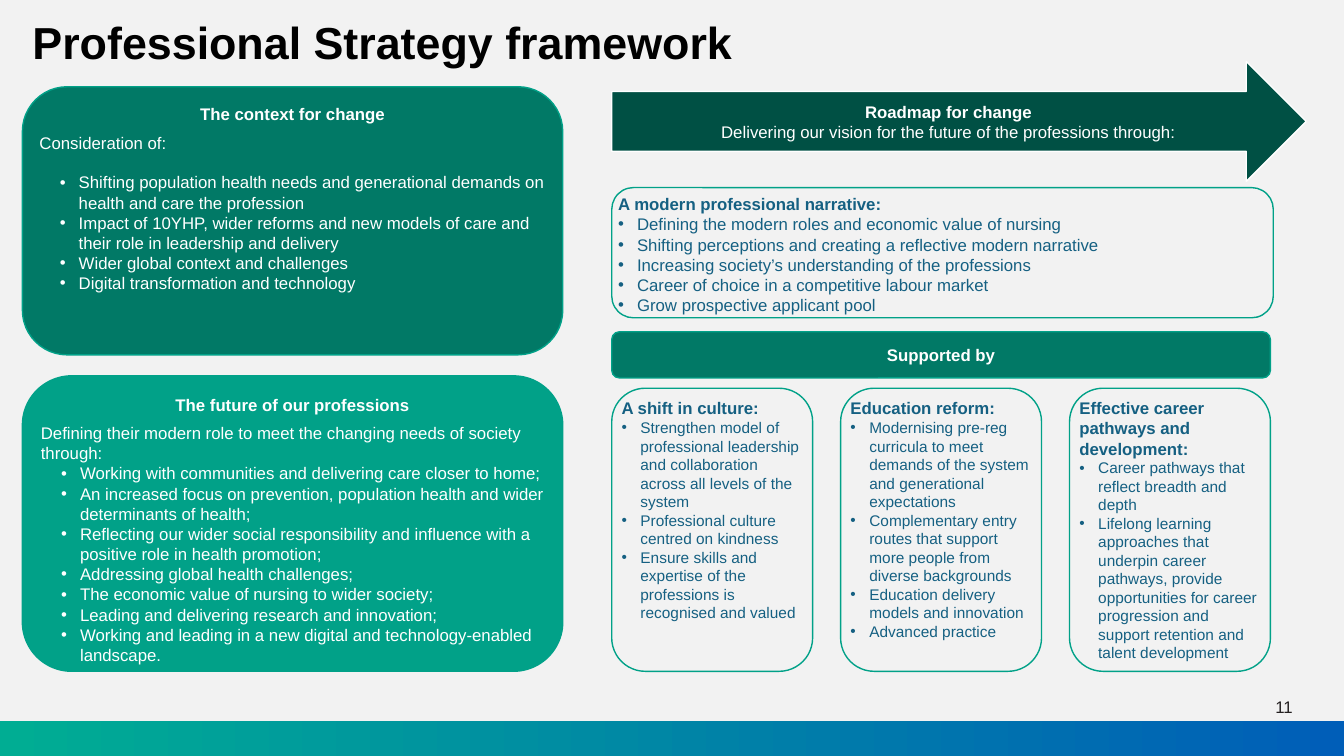
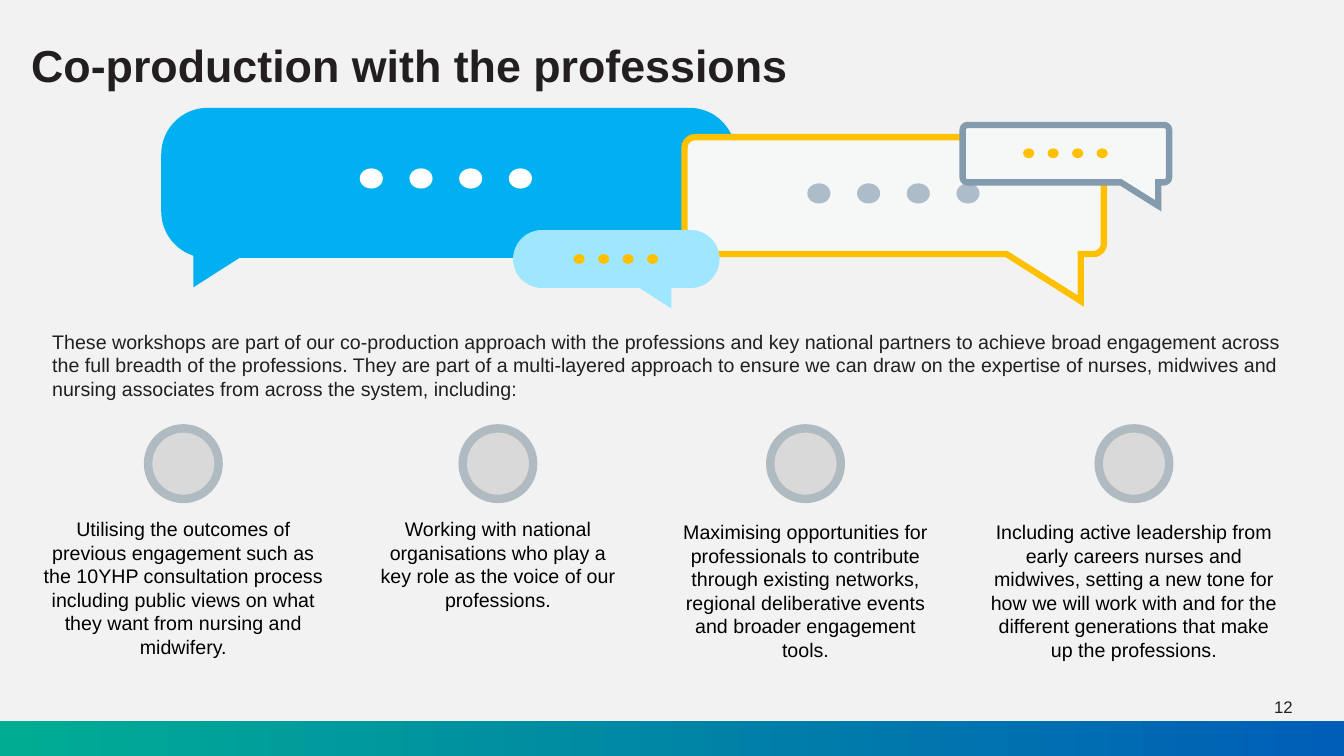
from math import cos, radians, sin

from lxml import etree
from pptx import Presentation
from pptx.dml.color import RGBColor
from pptx.enum.shapes import MSO_SHAPE as SHAPE
from pptx.enum.text import MSO_ANCHOR as ANCHOR, PP_ALIGN as ALIGN
from pptx.oxml.ns import qn
from pptx.util import Pt

C = {
    "page": "F2F2F2", "ink": "231F20", "black": "000000", "white": "FFFFFF",
    "blue": "005EB8", "mint": "00AD93", "green": "01A188", "teal": "017966",
    "forest": "005044", "navy": "156082", "sky": "00B0F0", "pale": "9FE6FF",
    "gold": "FFC000", "paper": "F6F8F8", "slate": "839BAC", "mist": "ACBCC8",
    "disc": "D9D9D9", "ring": "B0BAC1",
}
FONT = "Arial"
HEAD = {"bold": True}
CENTRED = {"alignment": ALIGN.CENTER}
CENTRED_HEAD = HEAD | CENTRED
PANEL_HEAD = CENTRED_HEAD | {"space_after": Pt(6)}


def paint(shape, fill=None, line=None, width=1):
    shape.shadow.inherit = False
    if fill:
        shape.fill.solid()
        shape.fill.fore_color.rgb = RGBColor.from_string(C[fill])
    else:
        shape.fill.background()
    if line:
        shape.line.color.rgb = RGBColor.from_string(C[line])
        shape.line.width = Pt(width)
    else:
        shape.line.fill.background()
    return shape


def write(shape, lines, color, size=12, anchor=ANCHOR.TOP, inset=None):
    """Fill a shape with (text, format) lines; a "bullet" format is the left indent in points."""
    tf = shape.text_frame
    tf.word_wrap = True
    tf.vertical_anchor = anchor
    if inset is not None:
        tf.margin_left = tf.margin_top = tf.margin_right = tf.margin_bottom = Pt(inset)
    for i, (text, form) in enumerate(lines):
        p = tf.add_paragraph() if i else tf.paragraphs[0]
        p.alignment = form.get("alignment", ALIGN.LEFT)
        for name in ("space_after", "line_spacing"):
            if name in form:
                setattr(p, name, form[name])
        if "bullet" in form:
            pPr = p._p.get_or_add_pPr()
            pPr.set("marL", str(Pt(form["bullet"])))
            pPr.set("indent", str(-Pt(13.5)))
            etree.SubElement(pPr, qn("a:buFont")).set("typeface", FONT)
            etree.SubElement(pPr, qn("a:buChar")).set("char", "•")
        r = p.add_run()
        r.text = text
        r.font.name = FONT
        r.font.size = Pt(form.get("size", size))
        r.font.bold = form.get("bold", False)
        r.font.color.rgb = RGBColor.from_string(C[color])


prs = Presentation()
prs.slide_width, prs.slide_height = Pt(960), Pt(540)
background = prs.slide_master.background.fill
background.solid()
background.fore_color.rgb = RGBColor.from_string(C["page"])

# Title, page number and gradient band
titles = [
    ("Professional Strategy framework", (16, 11, 901, 66), "black", ANCHOR.TOP),
    ("Co-production with the professions", (15, 14.5, 898, 68), "ink", ANCHOR.MIDDLE),
]
slides = []
for number, (text, at, color, anchor) in enumerate(titles, 11):
    s = prs.slides.add_slide(prs.slide_layouts[5])
    slides.append(s)
    title = s.shapes.title
    title.left, title.top, title.width, title.height = map(Pt, at)
    write(title, [(text, HEAD | {"line_spacing": 0.9})], color, 32, anchor)

    page = s.shapes.add_textbox(Pt(880), Pt(494), Pt(50.5), Pt(21.6))
    write(page, [(str(number), {"alignment": ALIGN.RIGHT})], "ink")

    band = paint(s.shapes.add_shape(SHAPE.RECTANGLE, 0, Pt(515.2), Pt(960), Pt(24.8)))
    band.fill.gradient()
    band.fill.gradient_angle = 0
    for stop, name in zip(band.fill.gradient_stops, ("mint", "blue")):
        stop.color.rgb = RGBColor.from_string(C[name])
framework, coproduction = slides

# Framework: two panels on the left
s = framework
panels = [
    (62, 191.5, "teal", "The context for change", "Consideration of:", 14, [
        "Shifting population health needs and generational demands on health and care the profession",
        "Impact of 10YHP, wider reforms and new models of care and their role in leadership and delivery",
        "Wider global context and challenges",
        "Digital transformation and technology",
    ]),
    (268.5, 211, "green", "The future of our professions",
     "Defining their modern role to meet the changing needs of society through:", 0, [
         "Working with communities and delivering care closer to home;",
         "An increased focus on prevention, population health and wider determinants of health;",
         "Reflecting our wider social responsibility and influence with a positive role in health promotion;",
         "Addressing global health challenges;",
         "The economic value of nursing to wider society;",
         "Leading and delivering research and innovation;",
         "Working and leading in a new digital and technology-enabled landscape.",
     ]),
]
for top, height, fill, head, lead, gap, points in panels:
    panel = s.shapes.add_shape(SHAPE.ROUNDED_RECTANGLE, Pt(16), Pt(top), Pt(386), Pt(height))
    paint(panel, fill, "green")
    lines = [(head, PANEL_HEAD), (lead, {"space_after": Pt(gap)})]
    write(panel, lines + [(point, {"bullet": 28}) for point in points], "white", inset=2.88)

# Framework: roadmap on the right
arrow = s.shapes.add_shape(SHAPE.RIGHT_ARROW, Pt(437), Pt(44), Pt(496), Pt(85.5))
paint(arrow, "forest", "white")
write(arrow, [
    ("Roadmap for change", CENTRED_HEAD),
    ("Delivering our vision for the future of the professions through:", CENTRED),
], "white", anchor=ANCHOR.MIDDLE, inset=2.88)
arrow.text_frame.margin_left = Pt(9.4)

support = s.shapes.add_shape(SHAPE.ROUNDED_RECTANGLE, Pt(437), Pt(237), Pt(470.5), Pt(33))
paint(support, "teal", "green")
write(support, [("Supported by", CENTRED_HEAD)], "white", anchor=ANCHOR.MIDDLE)

narrative = ((437, 134, 472.5, 93), 12, "A modern professional narrative:", [
    "Defining the modern roles and economic value of nursing",
    "Shifting perceptions and creating a reflective modern narrative",
    "Increasing society’s understanding of the professions",
    "Career of choice in a competitive labour market",
    "Grow prospective applicant pool",
])
pillars = [
    ("A shift in culture:", [
        "Strengthen model of professional leadership and collaboration across all levels of the system",
        "Professional culture centred on kindness",
        "Ensure skills and expertise of the professions is recognised and valued",
    ]),
    ("Education reform:", [
        "Modernising pre-reg curricula to meet demands of the system and generational expectations",
        "Complementary entry routes that support more people from diverse backgrounds",
        "Education delivery models and innovation",
        "Advanced practice",
    ]),
    ("Effective career pathways and development:", [
        "Career pathways that reflect breadth and depth",
        "Lifelong learning approaches that underpin career pathways, provide opportunities for "
        "career progression and support retention and talent development",
    ]),
]
cards = [narrative] + [((437 + 163.5 * i, 277.3, 143.5, 202.2), 11, head, points)
                       for i, (head, points) in enumerate(pillars)]
for at, size, head, points in cards:
    card = paint(s.shapes.add_shape(SHAPE.ROUNDED_RECTANGLE, *map(Pt, at)), line="green")
    lines = [(head, HEAD)] + [(point, {"bullet": 13.5, "size": size}) for point in points]
    write(card, lines, "navy", inset=0)

# Co-production: speech bubbles, back to front
s = coproduction
parts = [
    ("pill", (115.2, 77, 410.4, 107.3), 0.31, "sky"),
    ("tail", (144.7, 175.7, 23, 36), 90, "sky"),
    ("outline", (489, 98, 299.5, 83.5), (7.5, 772, 719, 215), "gold"),
    ("dots", (576.7, 131, 16.5, 14.4), 35.5, "mist"),
    ("dots", (257, 120.3, 16.5, 14.4), 35.5, "white"),
    ("pill", (366.5, 164.3, 147.5, 41.4), 0.5, "pale"),
    ("dots", (409.7, 181.5, 8, 7), 17.5, "gold"),
    ("outline", (687.6, 89.3, 147.5, 41), (3.6, 827.3, 800.6, 147), "slate"),
    ("dots", (730.8, 106, 8, 7), 17.5, "gold"),
    ("tail", (453.5, 203.7, 26, 16.6), 180, "pale"),
]
for kind, (x, y, w, h), detail, color in parts:
    at = [Pt(v) for v in (x, y, w, h)]
    if kind == "pill":
        pill = paint(s.shapes.add_shape(SHAPE.ROUNDED_RECTANGLE, *at), color)
        pill.adjustments[0] = detail
    elif kind == "tail":
        tail = paint(s.shapes.add_shape(SHAPE.RIGHT_TRIANGLE, *at), color)
        tail.rotation = detail
    elif kind == "dots":
        for i in range(4):
            dot = s.shapes.add_shape(SHAPE.OVAL, Pt(x + i * detail), *at[1:])
            paint(dot, color)
    else:
        radius, tail_right, tail_left, tip = detail
        near, far, upper, lower = x + radius, x + w - radius, y + radius, y + h - radius
        outline = []
        corners = [(near, upper, 180), (far, upper, 270), (far, lower, 0), (near, lower, 90)]
        for cx, cy, start in corners:
            for step in range(0, 91, 15):
                angle = radians(start + step)
                outline.append((Pt(cx + radius * cos(angle)), Pt(cy + radius * sin(angle))))
            if start == 0:
                outline += [(Pt(tail_right), Pt(y + h)), (Pt(tail_right), Pt(tip)),
                            (Pt(tail_left), Pt(y + h))]
        builder = s.shapes.build_freeform(*outline[0])
        builder.add_line_segments(outline[1:])
        bubble = paint(builder.convert_to_shape(), "paper", color, 4.5)
        ln = bubble.element.spPr.find(qn("a:ln"))
        etree.SubElement(ln, qn("a:miter")).set("lim", "800000")

# Co-production: introduction and four strands
intro = s.shapes.add_textbox(Pt(30.2), Pt(231.8), Pt(908.6), Pt(58))
write(intro, [(
    "These workshops are part of our co-production approach with the professions and key national "
    "partners to achieve broad engagement across the full breadth of the professions. They are part "
    "of a multi-layered approach to ensure we can draw on the expertise of nurses, midwives and "
    "nursing associates from across the system, including:", {})], "ink", 14)

strands = [
    (131, 219, 365.8, "Utilising the outcomes of previous engagement such as the 10YHP consultation "
     "process including public views on what they want from nursing and midwifery."),
    (355.7, 188.6, 365.8, "Working with national organisations who play a key role as the voice "
     "of our professions."),
    (575.4, 208, 368, "Maximising opportunities for professionals to contribute through existing "
     "networks, regional deliberative events and broader engagement tools."),
    (810, 219, 368, "Including active leadership from early careers nurses and midwives, setting a "
     "new tone for how we will work with and for the different generations that make up the "
     "professions."),
]
disc_size = 50.4
for centre, width, top, text in strands:
    disc = s.shapes.add_shape(SHAPE.OVAL, Pt(centre - disc_size / 2), Pt(306),
                              Pt(disc_size), Pt(disc_size))
    paint(disc, "disc", "ring", 6)
    strand = s.shapes.add_textbox(Pt(centre - width / 2), Pt(top), Pt(width), Pt(108.7))
    write(strand, [(text, CENTRED)], "black", 14)

prs.save("out.pptx")
